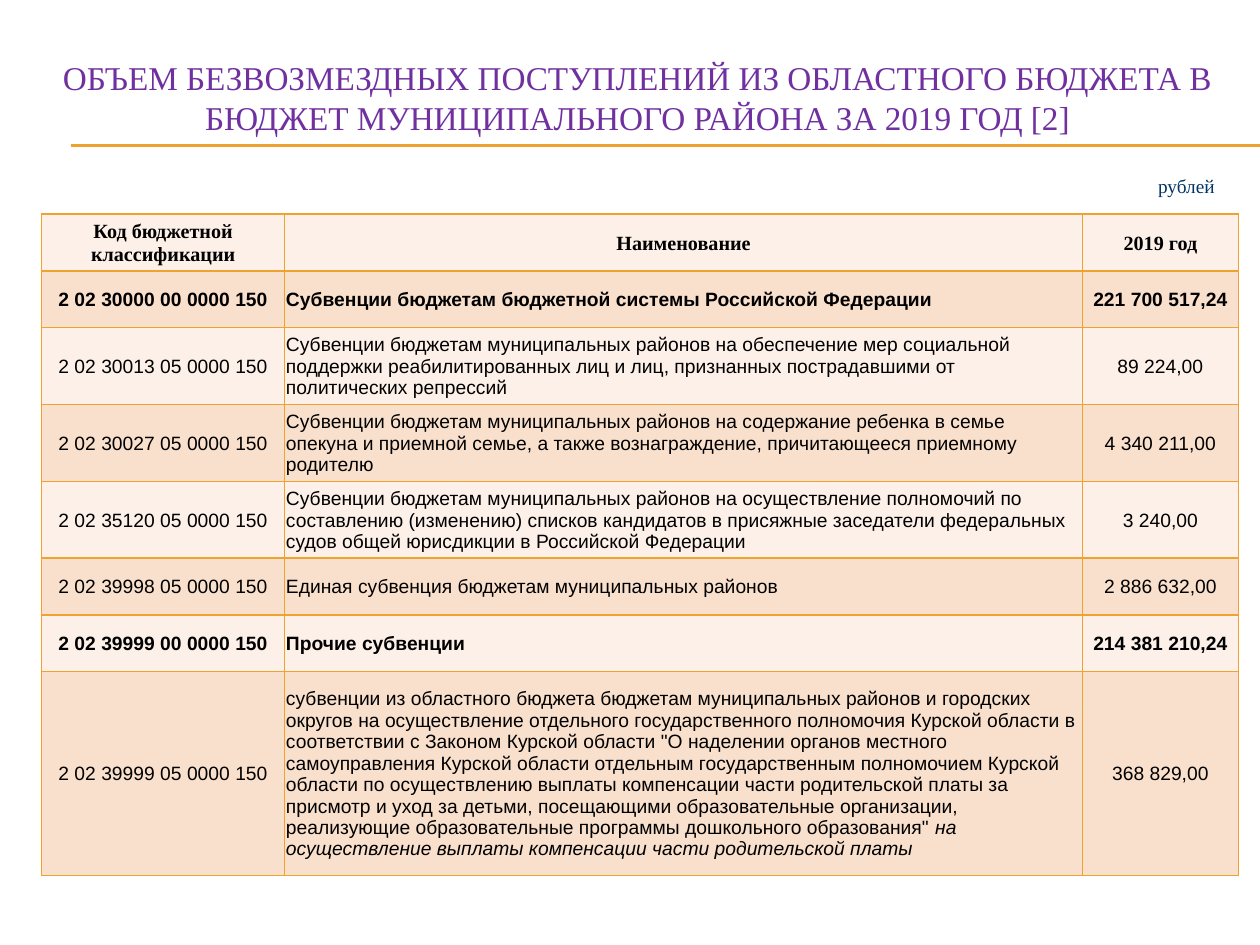
from lxml.etree import SubElement
from pptx import Presentation
from pptx.dml.color import RGBColor
from pptx.enum.shapes import MSO_CONNECTOR
from pptx.enum.text import MSO_ANCHOR, PP_ALIGN
from pptx.oxml.ns import qn
from pptx.util import Inches, Pt

COLORS = {"gold": "F0A22E", "title": "7030A0", "unit": "003366",
          "text": "000000", "light": "FCF0E8", "dark": "F9E0CD"}
COLS = [1.93, 6.33, 1.24]
ROW_HEIGHTS = [0.45, 0.45, 0.61, 0.61, 0.61, 0.45, 0.45, 1.62]
BOLD_ROWS = {0, 1, 6}
ROWS = [
    ("Код бюджетной классификации", "Наименование", "2019 год"),
    ("2 02 30000 00 0000 150",
     "Субвенции бюджетам бюджетной системы Российской Федерации",
     "221 700 517,24"),
    ("2 02 30013 05 0000 150",
     "Субвенции бюджетам муниципальных районов на обеспечение мер социальной "
     "поддержки реабилитированных лиц и лиц, признанных пострадавшими от "
     "политических репрессий",
     "89 224,00"),
    ("2 02 30027 05 0000 150",
     "Субвенции бюджетам муниципальных районов на содержание ребенка в семье "
     "опекуна и приемной семье, а также вознаграждение, причитающееся приемному "
     "родителю",
     "4 340 211,00"),
    ("2 02 35120 05 0000 150",
     "Субвенции бюджетам муниципальных районов на осуществление полномочий по "
     "составлению (изменению) списков кандидатов в присяжные заседатели "
     "федеральных судов общей юрисдикции в Российской Федерации",
     "3 240,00"),
    ("2 02 39998 05 0000 150",
     "Единая субвенция бюджетам муниципальных районов",
     "2 886 632,00"),
    ("2 02 39999 00 0000 150", "Прочие субвенции", "214 381 210,24"),
    ("2 02 39999 05 0000 150",
     "субвенции из областного бюджета бюджетам муниципальных районов и городских "
     "округов на осуществление отдельного государственного полномочия Курской "
     "области в соответствии с Законом Курской области \"О наделении органов "
     "местного самоуправления Курской области отдельным государственным "
     "полномочием Курской области по осуществлению выплаты компенсации части "
     "родительской платы за присмотр и уход за детьми, посещающими "
     "образовательные организации, реализующие образовательные программы "
     "дошкольного образования\" ",
     "368 829,00"),
]
ITALIC_ENDING = "на осуществление выплаты компенсации части родительской платы"


def style(p, size, font, color, align, bold=False):
    p.alignment = align
    p.font.size = Pt(size)
    p.font.name = font
    p.font.bold = bold
    p.font.color.rgb = RGBColor.from_string(COLORS[color])


def add_borders(cell):
    tc_pr = cell._tc.get_or_add_tcPr()
    for i, side in enumerate(("lnL", "lnR", "lnT", "lnB")):
        ln = tc_pr.makeelement(qn(f"a:{side}"), {"w": str(Pt(1))})
        fill = SubElement(ln, qn("a:solidFill"))
        SubElement(fill, qn("a:srgbClr"), val=COLORS["gold"])
        tc_pr.insert(i, ln)  # borders must precede the cell fill


prs = Presentation()
prs.slide_width, prs.slide_height = Inches(10), Inches(7.5)
s = prs.slides.add_slide(prs.slide_layouts[6])

# Double rule under the title
for y in (1.15, 1.16):
    rule = s.shapes.add_connector(MSO_CONNECTOR.STRAIGHT, Inches(0.56), Inches(y),
                                  Inches(10), Inches(y))
    rule.line.color.rgb = RGBColor.from_string(COLORS["gold"])
    rule.line.width = Pt(0.75)
    SubElement(rule._element.spPr, qn("a:effectLst"))

# Title
tf = s.shapes.add_textbox(Inches(0.31), Inches(0.31), Inches(9.5), Inches(0.92)).text_frame
tf.word_wrap = True
tf.vertical_anchor = MSO_ANCHOR.MIDDLE
p = tf.paragraphs[0]
p.text = ("ОБЪЕМ БЕЗВОЗМЕЗДНЫХ ПОСТУПЛЕНИЙ ИЗ ОБЛАСТНОГО БЮДЖЕТА В "
          "БЮДЖЕТ МУНИЦИПАЛЬНОГО РАЙОНА ЗА 2019 ГОД [2]")
style(p, 19, "Times New Roman", "title", PP_ALIGN.CENTER)

# Subvention table
table = s.shapes.add_table(len(ROWS), len(COLS), Inches(0.33), Inches(1.7),
                           Inches(9.5), Inches(5.25)).table
for column, width in zip(table.columns, COLS):
    column.width = Inches(width)
for r, (texts, height) in enumerate(zip(ROWS, ROW_HEIGHTS)):
    table.rows[r].height = Inches(height)
    size, font = (11.5, "Times New Roman") if r == 0 else (11, "Arial")
    for c, text in enumerate(texts):
        cell = table.cell(r, c)
        cell.margin_left = cell.margin_right = cell.margin_top = Inches(0.01)
        cell.margin_bottom = 0
        cell.vertical_anchor = MSO_ANCHOR.MIDDLE
        cell.fill.solid()
        cell.fill.fore_color.rgb = RGBColor.from_string(COLORS["dark" if r % 2 else "light"])
        add_borders(cell)
        p = cell.text_frame.paragraphs[0]
        p.text = text
        align = PP_ALIGN.LEFT if c == 1 and r > 0 else PP_ALIGN.CENTER
        style(p, size, font, "text", align, r in BOLD_ROWS)

ending = table.cell(len(ROWS) - 1, 1).text_frame.paragraphs[0].add_run()
ending.text = ITALIC_ENDING
ending.font.italic = True

# Unit of measure
tf = s.shapes.add_textbox(Inches(9.08), Inches(1.33), Inches(0.66), Inches(0.29)).text_frame
tf.word_wrap = False
p = tf.paragraphs[0]
p.text = "рублей"
style(p, 11, "Times New Roman", "unit", PP_ALIGN.RIGHT)

prs.save("out.pptx")
